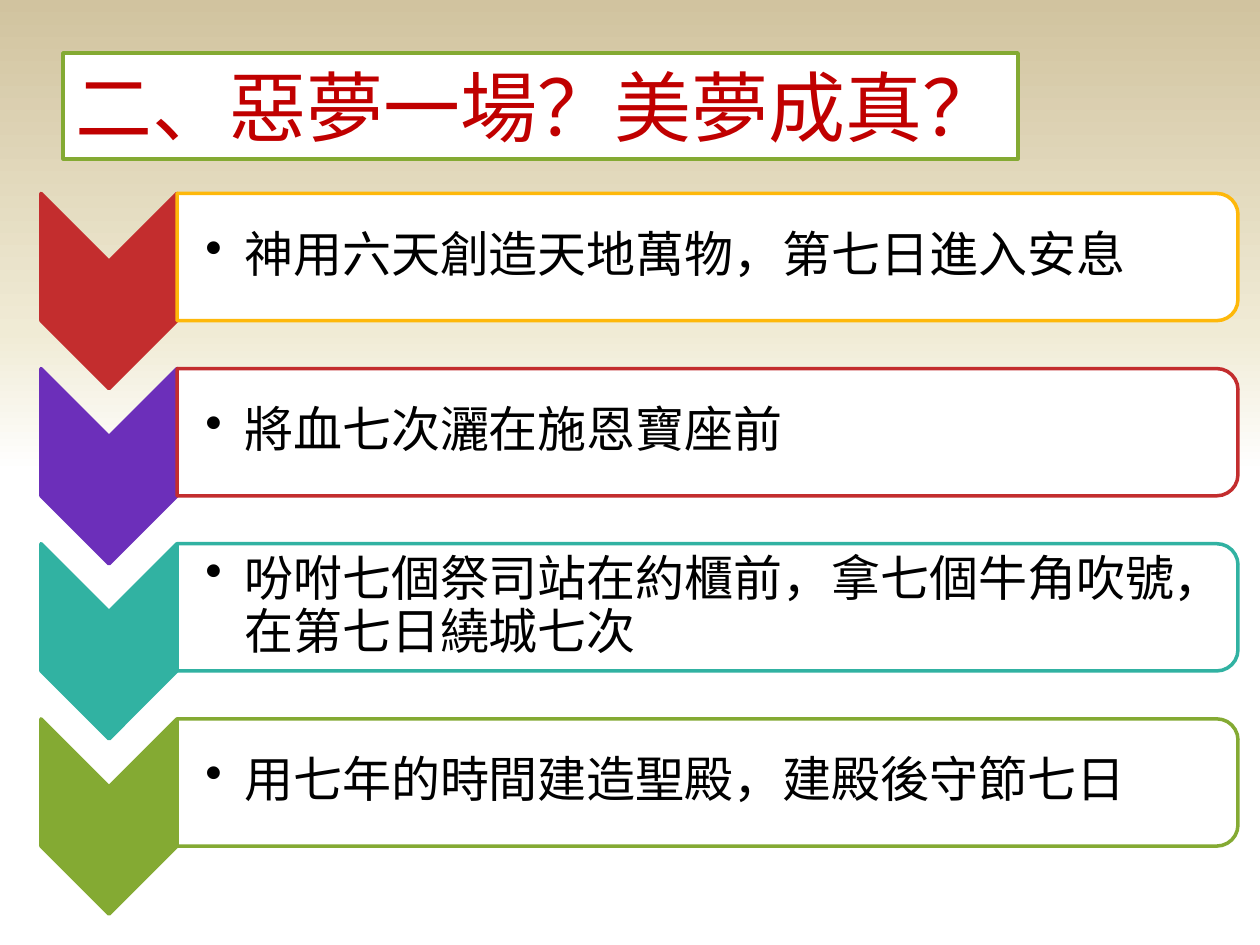
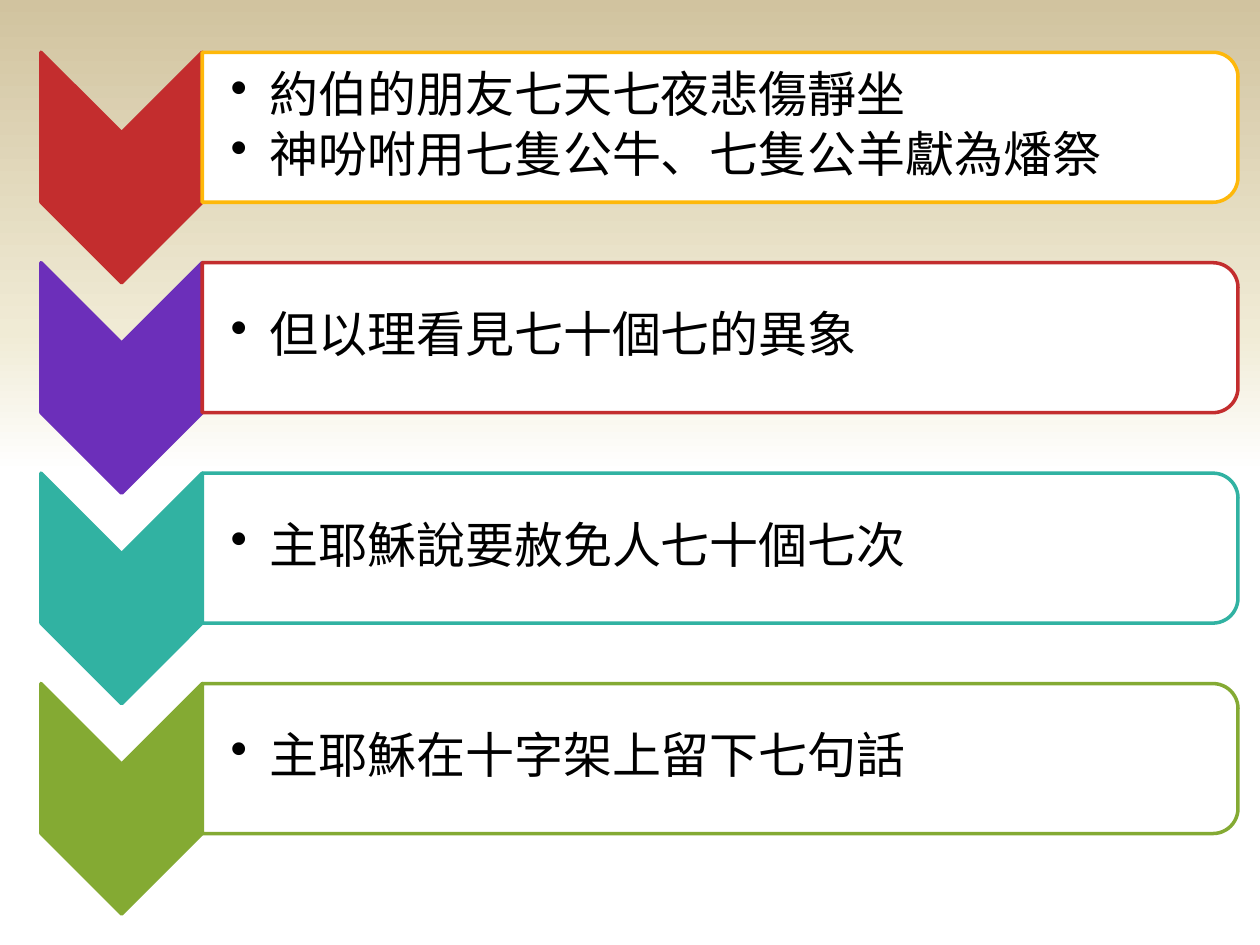
from dataclasses import dataclass

from lxml.etree import SubElement
from pptx import Presentation
from pptx.dml.color import RGBColor
from pptx.enum.shapes import MSO_SHAPE as Shp
from pptx.enum.text import MSO_ANCHOR as Anchor, MSO_AUTO_SIZE as Fit, PP_ALIGN as Align
from pptx.oxml.ns import qn
from pptx.shapes.autoshape import Shape
from pptx.slide import Slide, SlideMaster
from pptx.text.text import TextFrame
from pptx.util import Emu, Pt

PX_PER_INCH = 100
SCALE = 914400 // PX_PER_INCH


@dataclass(frozen=True)
class Theme:
    font: str = "Calibri"
    title_size: int = 44
    body_size: int = 28
    line_width: int = 2
    title: str = "C00000"
    text: str = "000000"
    panel: str = "FFFFFF"
    title_line: str = "84AA33"
    chevrons: tuple[str, ...] = ("C32D2E", "6C2FBA", "31B2A2", "84AA33")
    outlines: tuple[str, ...] = ("FEB80A", "C32D2E", "31B2A2", "84AA33")
    gradient: tuple[tuple[int, str], ...] = (
        (0, "D1C39F"), (35, "F0EBD5"), (50, "FFFFFF"), (100, "FFFFFF"))


@dataclass(frozen=True)
class Box:
    left: int
    top: int
    width: int
    height: int

    def emu(self) -> tuple[Emu, Emu, Emu, Emu]:
        return px(self.left), px(self.top), px(self.width), px(self.height)

    def turned(self) -> "Box":
        shift = (self.width - self.height) // 2
        return Box(self.left + shift, self.top - shift, self.height, self.width)


@dataclass(frozen=True)
class ChevronList:
    top: int
    pitch: int
    chevron_width: int
    chevron_height: int
    panel_height: int
    rows: tuple[str, ...]
    left: int = 33
    right: int = 983


THEME = Theme()
TITLE_BOX = Box(50, 42, 758, 84)
TITLE = "二、惡夢一場？美夢成真？"
CREATION_TO_TEMPLE = ChevronList(153, 139, 108, 155, 101, (
    "神用六天創造天地萬物，第七日進入安息",
    "將血七次灑在施恩寶座前",
    "吩咐七個祭司站在約櫃前，拿七個牛角吹號，在第七日繞城七次",
    "用七年的時間建造聖殿，建殿後守節七日",
))
JOB_TO_CROSS = ChevronList(41, 167, 128, 183, 119, (
    "約伯的朋友七天七夜悲傷靜坐\n神吩咐用七隻公牛、七隻公羊獻為燔祭",
    "但以理看見七十個七的異象",
    "主耶穌說要赦免人七十個七次",
    "主耶穌在十字架上留下七句話",
))


def px(n: int) -> Emu:
    return Emu(n * SCALE)


def set_background(master: SlideMaster) -> None:
    fill = master.background.fill
    fill.gradient()
    fill.gradient_angle = 270
    stops = master.element.find(".//" + qn("p:bg")).find(".//" + qn("a:gsLst"))
    for old in list(stops):
        stops.remove(old)
    for pos, color in THEME.gradient:
        gs = SubElement(stops, qn("a:gs"), pos=str(pos * 1000))
        SubElement(gs, qn("a:srgbClr"), val=color)


def paint(sp: Shape, fill: str, line: str) -> None:
    sp.fill.solid()
    sp.fill.fore_color.rgb = RGBColor.from_string(fill)
    sp.line.color.rgb = RGBColor.from_string(line)
    sp.line.width = Pt(THEME.line_width)


def format_runs(tf: TextFrame, size: int, color: str) -> None:
    for p in tf.paragraphs:
        for r in p.runs:
            r.font.name = THEME.font
            r.font.size = Pt(size)
            r.font.color.rgb = RGBColor.from_string(color)


def add_turned(s: Slide, kind: Shp, box: Box, fill: str, line: str) -> None:
    sp = s.shapes.add_shape(kind, *box.turned().emu())
    sp.rotation = 90
    sp.shadow.inherit = False
    paint(sp, fill, line)


def add_bullets(s: Slide, box: Box, text: str) -> None:
    tf = s.shapes.add_textbox(*box.emu()).text_frame
    tf.word_wrap = True
    tf.vertical_anchor = Anchor.MIDDLE
    tf.margin_left = px(22)
    tf.margin_right = tf.margin_top = tf.margin_bottom = px(2)
    tf.text = text
    for p in tf.paragraphs:
        p.level = 1
        p.line_spacing = 0.9
        p.space_after = Pt(4)
        props = p._p.get_or_add_pPr()
        props.set("marL", str(px(31)))
        props.set("indent", str(-px(31)))
        SubElement(props, qn("a:buChar"), char="•")
    format_runs(tf, THEME.body_size, THEME.text)


def add_chevron_list(s: Slide, spec_list: ChevronList) -> None:
    c = spec_list
    panel_left = c.left + c.chevron_width
    panel_width = c.right - panel_left
    for i, (text, color, outline) in enumerate(zip(c.rows, THEME.chevrons, THEME.outlines)):
        top = c.top + i * c.pitch
        chevron = Box(c.left, top, c.chevron_width, c.chevron_height)
        panel = Box(panel_left, top, panel_width, c.panel_height)
        label = Box(panel_left, top + 5, panel_width - 5, c.panel_height - 10)
        add_turned(s, Shp.CHEVRON, chevron, color, color)
        add_turned(s, Shp.ROUND_2_SAME_RECTANGLE, panel, THEME.panel, outline)
        add_bullets(s, label, text)


def set_title(s: Slide, text: str) -> None:
    sp = s.shapes.title
    sp.left, sp.top, sp.width, sp.height = TITLE_BOX.emu()
    paint(sp, THEME.panel, THEME.title_line)
    tf = sp.text_frame
    tf.text = text
    tf.auto_size = Fit.NONE
    tf.vertical_anchor = Anchor.MIDDLE
    tf.paragraphs[0].alignment = Align.LEFT
    format_runs(tf, THEME.title_size, THEME.title)


def main() -> None:
    prs = Presentation()
    prs.slide_width, prs.slide_height = px(1000), px(750)
    set_background(prs.slide_master)
    title_only = prs.slide_layouts.get_by_name("Title Only")
    blank = prs.slide_layouts.get_by_name("Blank")

    s = prs.slides.add_slide(title_only)
    set_title(s, TITLE)
    add_chevron_list(s, CREATION_TO_TEMPLE)

    s = prs.slides.add_slide(blank)
    add_chevron_list(s, JOB_TO_CROSS)

    prs.save("out.pptx")


if __name__ == "__main__":
    main()
